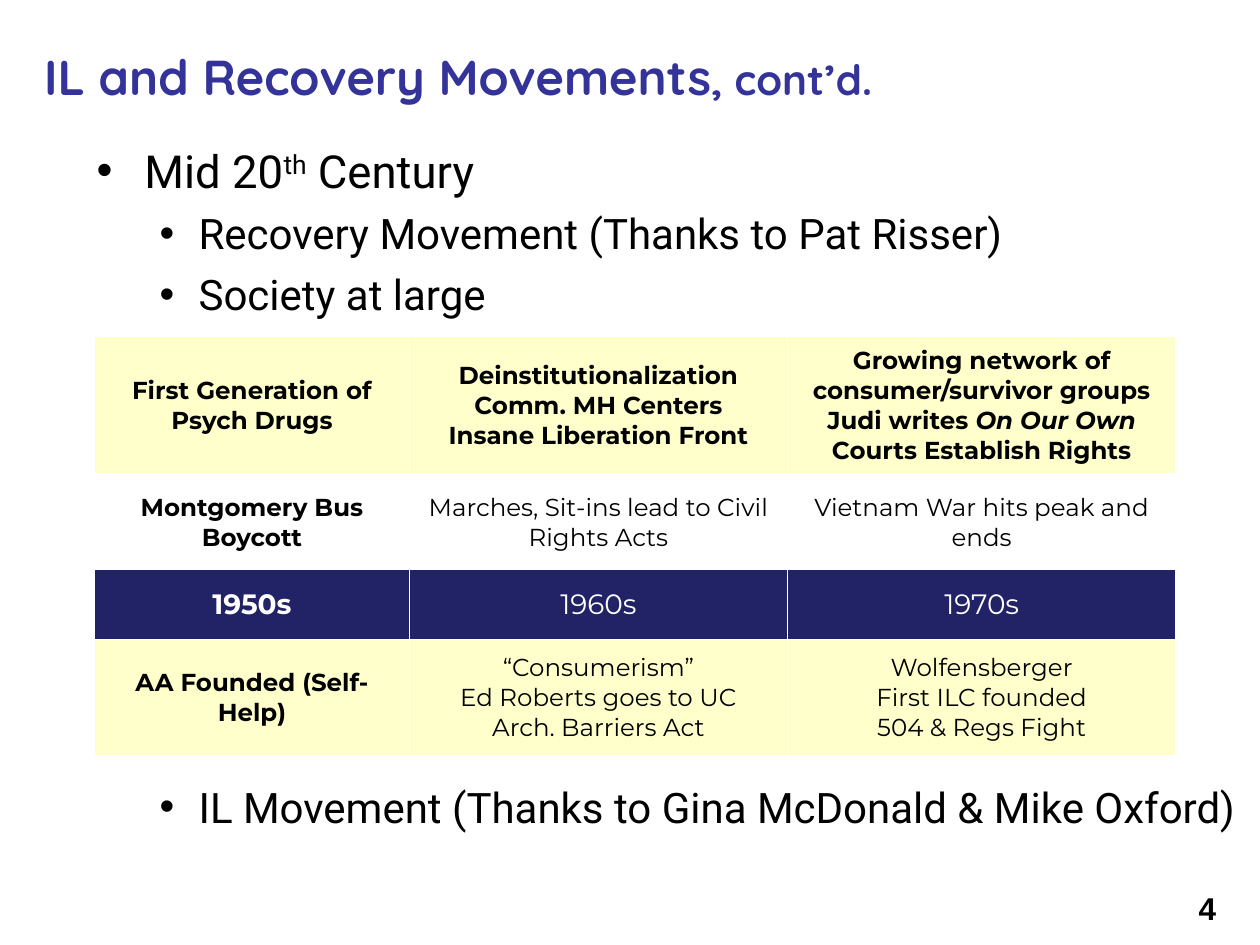
from dataclasses import dataclass

from lxml import etree
from pptx import Presentation, util as u
from pptx.dml.color import RGBColor
from pptx.enum import text
from pptx.oxml.ns import qn

COLUMNS, ROWS = 120, 90
UNIT = u.Inches(10) // COLUMNS


@dataclass(frozen=True)
class Theme:
    title: str = "333399"
    ink: str = "000000"
    paper: str = "FFFFFF"
    cream: str = "FFFFCC"
    navy: str = "222267"
    title_font: str = "Quicksand"
    body_font: str = "Roboto"
    table_font: str = "Montserrat"
    number_font: str = "Arial"
    title_size: int = 28
    subtitle_size: int = 24
    list_size: int = 26
    sublist_size: int = 24
    cell_size: int = 14
    decade_size: int = 16
    number_size: int = 18


THEME = Theme()


@dataclass(frozen=True)
class Area:
    """A place on the slide grid."""
    column: float
    row: float
    columns: float
    rows: float


@dataclass(frozen=True)
class Style:
    font: str
    size: int
    color: str = THEME.ink
    bold: bool = False


@dataclass(frozen=True)
class Span:
    words: str
    italic: bool = False
    raised: bool = False


@dataclass(frozen=True)
class Bullet:
    spans: tuple[Span, ...]
    level: int = 1
    before: float = 6


@dataclass(frozen=True)
class TableRow:
    rows: float
    cells: tuple[tuple[Span, ...], ...]
    fill: str | None = None
    color: str = THEME.ink
    size: int = THEME.cell_size
    all_bold: bool = False
    rule_below: float = 1


TITLE_AREA = Area(3, 2, 104, 10.4)
LIST_AREA = Area(8, 13, 112, 70)
TABLE_AREA = Area(9, 32, 103, 40)
NUMBER_AREA = Area(103, 84.1, 14, 6.8)
TABLE_COLUMNS = (30, 36, 37)
LEVEL_INDENTS = ((0.38, 0.38), (0.81, 0.31))
SPACE_FOR_TABLE = 264

BULLETS = (
    Bullet((Span("Mid 20"), Span("th", raised=True), Span(" Century")), level=0, before=0),
    Bullet((Span("Recovery Movement (Thanks to Pat Risser)"),)),
    Bullet((Span("Society at large"),)),
    Bullet((Span("IL Movement (Thanks to Gina McDonald & Mike Oxford)"),),
           before=SPACE_FOR_TABLE),
)

TIMELINE = (
    TableRow(13.3, (
        (Span("First Generation of Psych Drugs"),),
        (Span("Deinstitutionalization\nComm. MH Centers\nInsane Liberation Front"),),
        (Span("Growing network of consumer/survivor groups\nJudi writes "),
         Span("On Our Own", italic=True), Span("\nCourts Establish Rights")),
    ), THEME.cream, all_bold=True, rule_below=3),
    TableRow(8.9, (
        (Span("Montgomery Bus Boycott"),),
        (Span("Marches, Sit-ins lead to Civil Rights Acts"),),
        (Span("Vietnam War hits peak and ends"),),
    )),
    TableRow(6.7, ((Span("1950s"),), (Span("1960s"),), (Span("1970s"),)),
             THEME.navy, THEME.paper, THEME.decade_size),
    TableRow(11.1, (
        (Span("AA Founded (Self-Help)"),),
        (Span("“Consumerism”\nEd Roberts goes to UC\nArch. Barriers Act"),),
        (Span("Wolfensberger\nFirst ILC founded\n504 & Regs Fight"),),
    ), THEME.cream),
)


def grid(count: float) -> int:
    return round(count * UNIT)


def place(area: Area) -> tuple[int, int, int, int]:
    return grid(area.column), grid(area.row), grid(area.columns), grid(area.rows)


def move(shape, area: Area) -> None:
    shape.left, shape.top, shape.width, shape.height = place(area)


def write(para, spans: tuple[Span, ...], style: Style) -> None:
    for span in spans:
        for index, line in enumerate(span.words.split("\n")):
            if index:
                para.add_line_break()
            if not line:
                continue
            run = para.add_run()
            run.text = line
            font = run.font
            font.name, font.size = style.font, u.Pt(style.size)
            font.bold, font.italic = style.bold, span.italic
            font.color.rgb = RGBColor.from_string(style.color)
            if span.raised:
                run._r.get_or_add_rPr().set("baseline", "30000")


def add_bullet_mark(para, level: int) -> None:
    left, hanging = LEVEL_INDENTS[level]
    properties = para._p.get_or_add_pPr()
    properties.set("marL", str(u.Inches(left)))
    properties.set("indent", str(-u.Inches(hanging)))
    color = etree.SubElement(properties, qn("a:buClr"))
    etree.SubElement(color, qn("a:srgbClr"), val=THEME.ink)
    etree.SubElement(properties, qn("a:buFont"), typeface=THEME.number_font)
    etree.SubElement(properties, qn("a:buChar"), char="•")


def draw_title(title) -> None:
    move(title, TITLE_AREA)
    frame = title.text_frame
    frame.auto_size = text.MSO_AUTO_SIZE.NONE
    frame.vertical_anchor = text.MSO_ANCHOR.MIDDLE
    para = frame.paragraphs[0]
    para.alignment = text.PP_ALIGN.LEFT
    for words, size in (("IL and Recovery Movements", THEME.title_size),
                        (", cont’d.", THEME.subtitle_size)):
        write(para, (Span(words),), Style(THEME.title_font, size, THEME.title, True))


def draw_list(body) -> None:
    move(body, LIST_AREA)
    frame = body.text_frame
    frame.auto_size = text.MSO_AUTO_SIZE.NONE
    for index, bullet in enumerate(BULLETS):
        para = frame.add_paragraph() if index else frame.paragraphs[0]
        para.level = bullet.level
        add_bullet_mark(para, bullet.level)
        para.space_before = u.Pt(bullet.before)
        size = THEME.sublist_size if bullet.level else THEME.list_size
        write(para, bullet.spans, Style(THEME.body_font, size))


def add_border(cell, side: str, width: float) -> None:
    line = etree.SubElement(cell._tc.get_or_add_tcPr(), qn(f"a:ln{side}"),
                            w=str(u.Pt(width)))
    fill = etree.SubElement(line, qn("a:solidFill"))
    etree.SubElement(fill, qn("a:srgbClr"), val=THEME.paper)


def draw_cell(cell, spans: tuple[Span, ...], row: TableRow, bold: bool, rule_above: float) -> None:
    cell.margin_left = cell.margin_right = u.Inches(0.07)
    cell.margin_top = cell.margin_bottom = 0
    cell.vertical_anchor = text.MSO_ANCHOR.MIDDLE
    for side, width in (("L", 1), ("R", 1), ("T", rule_above), ("B", row.rule_below)):
        add_border(cell, side, width)
    if row.fill:
        cell.fill.solid()
        cell.fill.fore_color.rgb = RGBColor.from_string(row.fill)
    else:
        cell.fill.background()
    para = cell.text_frame.paragraphs[0]
    para.alignment = text.PP_ALIGN.CENTER
    para.space_after = u.Pt(6)
    write(para, spans, Style(THEME.table_font, row.size, row.color, bold))


def draw_timeline(page) -> None:
    table = page.shapes.add_table(len(TIMELINE), len(TABLE_COLUMNS), *place(TABLE_AREA)).table
    table.first_row = table.horz_banding = False
    for column, width in zip(table.columns, TABLE_COLUMNS):
        column.width = grid(width)
    rule_above = 1
    for index, row in enumerate(TIMELINE):
        table.rows[index].height = grid(row.rows)
        for column, spans in enumerate(row.cells):
            bold = row.all_bold or column == 0
            draw_cell(table.cell(index, column), spans, row, bold, rule_above)
        rule_above = row.rule_below


def draw_page_number(page) -> None:
    box = page.shapes.add_textbox(*place(NUMBER_AREA))
    box.text_frame.word_wrap = True
    para = box.text_frame.paragraphs[0]
    para.alignment = text.PP_ALIGN.RIGHT
    write(para, (Span("4"),), Style(THEME.number_font, THEME.number_size, bold=True))


def main() -> None:
    deck = Presentation()
    deck.slide_width, deck.slide_height = grid(COLUMNS), grid(ROWS)
    page = deck.slides.add_slide(deck.slide_layouts[1])
    draw_page_number(page)
    draw_title(page.shapes.title)
    draw_list(page.placeholders[1])
    draw_timeline(page)
    deck.save("out.pptx")


if __name__ == "__main__":
    main()
